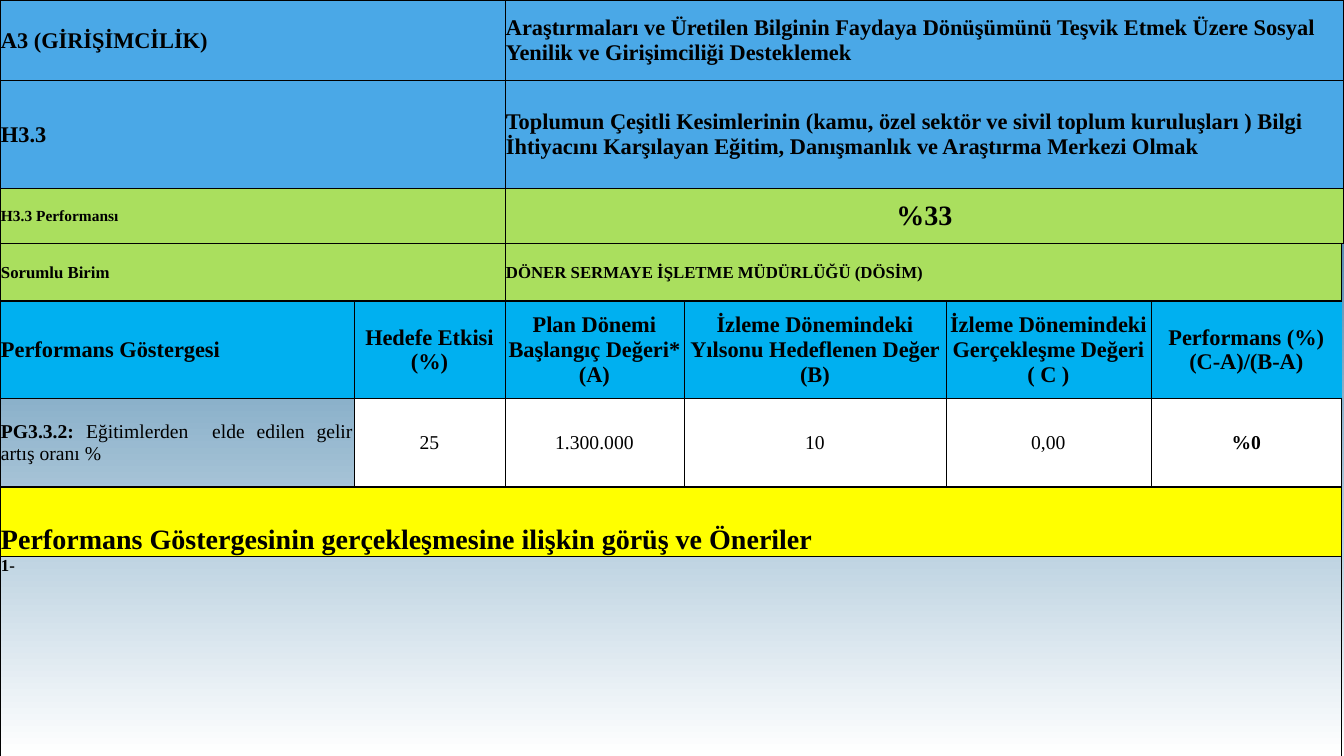
from dataclasses import dataclass

from lxml.etree import SubElement
from pptx import Presentation
from pptx.dml.color import RGBColor
from pptx.enum.text import MSO_ANCHOR, PP_ALIGN
from pptx.oxml.ns import qn
from pptx.util import Emu, Pt

FONT = "Times New Roman"
BLACK = RGBColor(0x00, 0x00, 0x00)
WHITE = RGBColor(0xFF, 0xFF, 0xFF)
DEEP_BLUE = RGBColor(0x06, 0x58, 0x8E)
BLUE = RGBColor(0x4A, 0xA8, 0xE7)
GREEN = RGBColor(0xAA, 0xDF, 0x5E)
CYAN = RGBColor(0x00, 0xB0, 0xF0)
YELLOW = RGBColor(0xFF, 0xFF, 0x00)

LEFT, CENTER, JUSTIFY = PP_ALIGN.LEFT, PP_ALIGN.CENTER, PP_ALIGN.JUSTIFY
THIN, THICK = 0.5, 1


@dataclass
class Cell:
    text: str
    size: int = 16
    fill: RGBColor | None = None
    span: int = 1
    align: PP_ALIGN = LEFT
    anchor: MSO_ANCHOR = MSO_ANCHOR.MIDDLE
    bold: bool = True
    lead: str = ""
    sides: str = "LRTB"


@dataclass
class Row:
    height: int
    cells: list[Cell]
    top: float = THIN
    bottom: float = THIN


def header(text: str, align: PP_ALIGN = CENTER, sides: str = "LRTB") -> Cell:
    return Cell(text, fill=CYAN, align=align, sides=sides)


def value(text: str, bold: bool = False) -> Cell:
    return Cell(text, 14, WHITE, align=CENTER, bold=bold)


GOAL_COLS = [365, 140, 839]
GOAL_ROWS = [
    Row(80, [
        Cell("A3 (GİRİŞİMCİLİK)", fill=BLUE, span=2),
        Cell("Araştırmaları ve Üretilen Bilginin Faydaya Dönüşümünü Teşvik Etmek "
             "Üzere Sosyal Yenilik ve Girişimciliği Desteklemek", fill=BLUE),
    ], top=THICK),
    Row(108, [
        Cell("H3.3", fill=BLUE, align=JUSTIFY, sides="LTB"),
        Cell("", fill=BLUE, sides="RTB"),
        Cell("Toplumun Çeşitli Kesimlerinin (kamu, özel sektör ve sivil toplum "
             "kuruluşları ) Bilgi İhtiyacını Karşılayan Eğitim, Danışmanlık ve "
             "Araştırma Merkezi Olmak", fill=BLUE),
    ]),
    Row(55, [
        Cell("H3.3 Performansı", 11, GREEN, span=2),
        Cell("%33", 20, GREEN, align=CENTER),
    ]),
]

INDICATOR_COLS = [354, 151, 179, 262, 205, 191]
INDICATOR_ROWS = [
    Row(58, [
        Cell("Sorumlu Birim", 12, GREEN, span=2),
        Cell("DÖNER SERMAYE İŞLETME MÜDÜRLÜĞÜ (DÖSİM)", 12, GREEN, span=4),
    ], bottom=THICK),
    Row(97, [
        header("Performans Göstergesi", JUSTIFY),
        header("Hedefe Etkisi (%)"),
        header("Plan Dönemi Başlangıç Değeri* (A)"),
        header("İzleme Dönemindeki Yılsonu Hedeflenen Değer (B)"),
        header("İzleme Dönemindeki Gerçekleşme Değeri ( C )"),
        header("Performans (%) (C-A)/(B-A)", sides="LTB"),
    ], top=THICK),
    Row(89, [
        Cell("Eğitimlerden  elde edilen gelir artış oranı %", 14, align=JUSTIFY,
             bold=False, lead="PG3.3.2: "),
        value("25"),
        value("1.300.000"),
        value("10"),
        value("0,00"),
        value("%0", bold=True),
    ], bottom=THICK),
    Row(69, [
        Cell("Performans Göstergesinin gerçekleşmesine ilişkin görüş ve Öneriler",
             20, YELLOW, span=6, anchor=MSO_ANCHOR.BOTTOM),
    ], top=THICK),
    Row(200, [Cell("1-", 12, span=6, anchor=MSO_ANCHOR.TOP)]),
]


def px(n: int) -> Emu:
    return Emu(round(n * 914400 / 100.8))


def add_run(p, text: str, *, size: int, bold: bool) -> None:
    r = p.add_run()
    r.text = text
    r.font.name, r.font.size, r.font.bold = FONT, Pt(size), bold
    r.font.color.rgb = BLACK


def set_borders(tc, widths: dict[str, float]) -> None:
    """Draw black lines on the sides with a width, and none on sides of width 0."""
    tcPr = tc.get_or_add_tcPr()
    for side, width in widths.items():
        ln = SubElement(tcPr, qn(f"a:ln{side}"), w=str(int(Pt(width))))
        if width:
            fill = SubElement(ln, qn("a:solidFill"))
            SubElement(fill, qn("a:srgbClr"), val=str(BLACK))
        else:
            SubElement(ln, qn("a:noFill"))


def fill_cell(cell, spec: Cell, widths: dict[str, float]) -> None:
    set_borders(cell._tc, widths)
    if spec.fill is None:
        cell.fill.background()
    else:
        cell.fill.solid()
        cell.fill.fore_color.rgb = spec.fill
    cell.margin_left = cell.margin_right = cell.margin_top = px(1)
    cell.margin_bottom = 0
    cell.vertical_anchor = spec.anchor
    p = cell.text_frame.paragraphs[0]
    p.alignment = spec.align
    if spec.lead:
        add_run(p, spec.lead, size=spec.size, bold=True)
    if spec.text:
        add_run(p, spec.text, size=spec.size, bold=spec.bold)


def add_grid(s, top: int, cols: list[int], rows: list[Row]) -> None:
    height = sum(row.height for row in rows)
    frame = s.shapes.add_table(len(rows), len(cols), 0, px(top), px(sum(cols)), px(height))
    table = frame.table
    table.first_row = table.horz_banding = False
    for column, width in zip(table.columns, cols):
        column.width = px(width)
    for i, row in enumerate(rows):
        table.rows[i].height = px(row.height)
        j = 0
        for spec in row.cells:
            cell, end = table.cell(i, j), j + spec.span
            if spec.span > 1:
                cell.merge(table.cell(i, end - 1))
            widths = {
                "L": THICK if j == 0 else THIN,
                "R": THICK if end == len(cols) else THIN,
                "T": row.top,
                "B": row.bottom,
            }
            fill_cell(cell, spec, {k: w if k in spec.sides else 0 for k, w in widths.items()})
            j = end


def main() -> None:
    prs = Presentation()
    prs.slide_width, prs.slide_height = px(1344), px(756)
    s = prs.slides.add_slide(prs.slide_layouts[6])
    background = s.background.fill
    background.gradient()
    background.gradient_angle = 90
    for stop, color in zip(background.gradient_stops, (WHITE, DEEP_BLUE)):
        stop.color.rgb = color
    add_grid(s, 0, GOAL_COLS, GOAL_ROWS)
    add_grid(s, sum(row.height for row in GOAL_ROWS), INDICATOR_COLS, INDICATOR_ROWS)
    prs.save("out.pptx")


if __name__ == "__main__":
    main()
